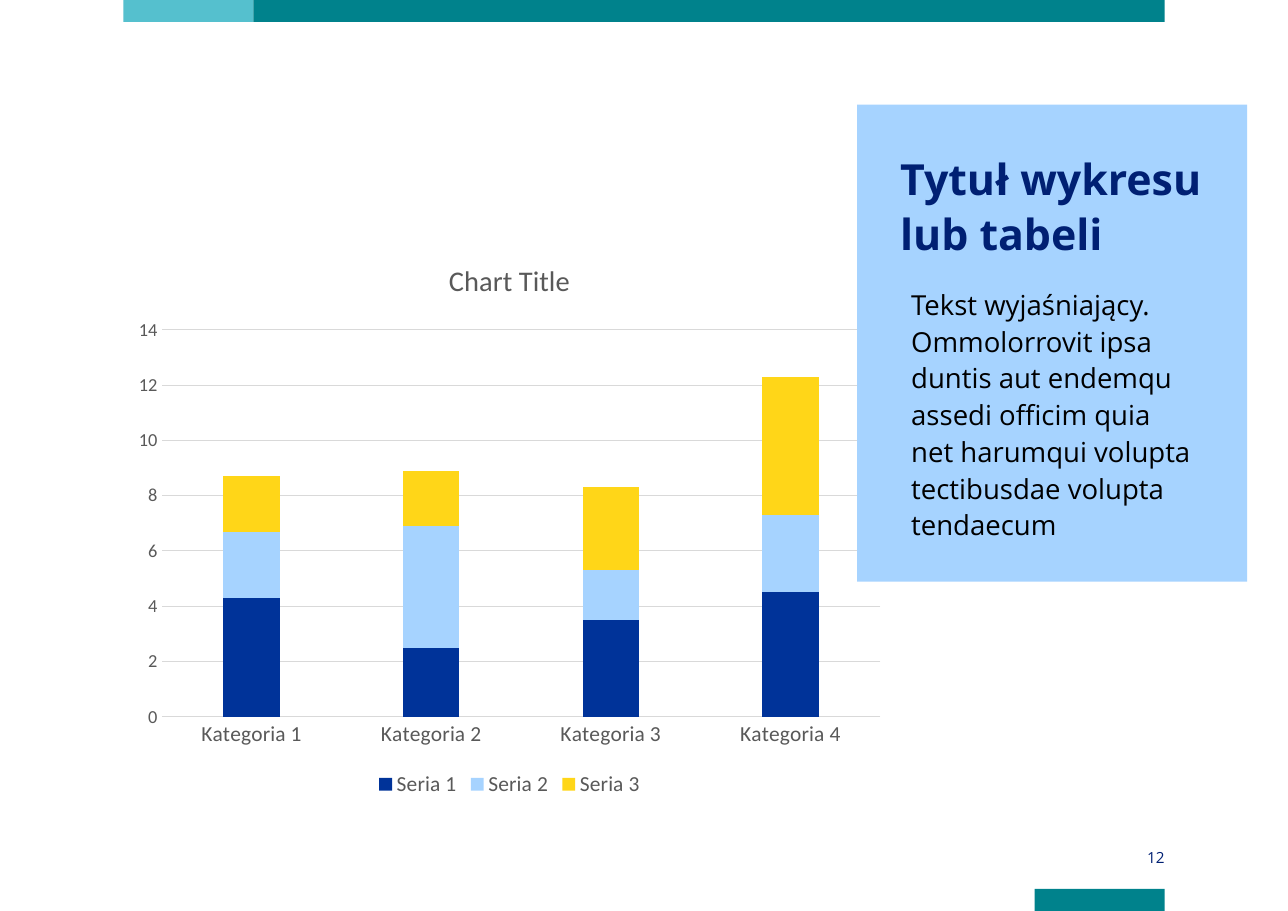
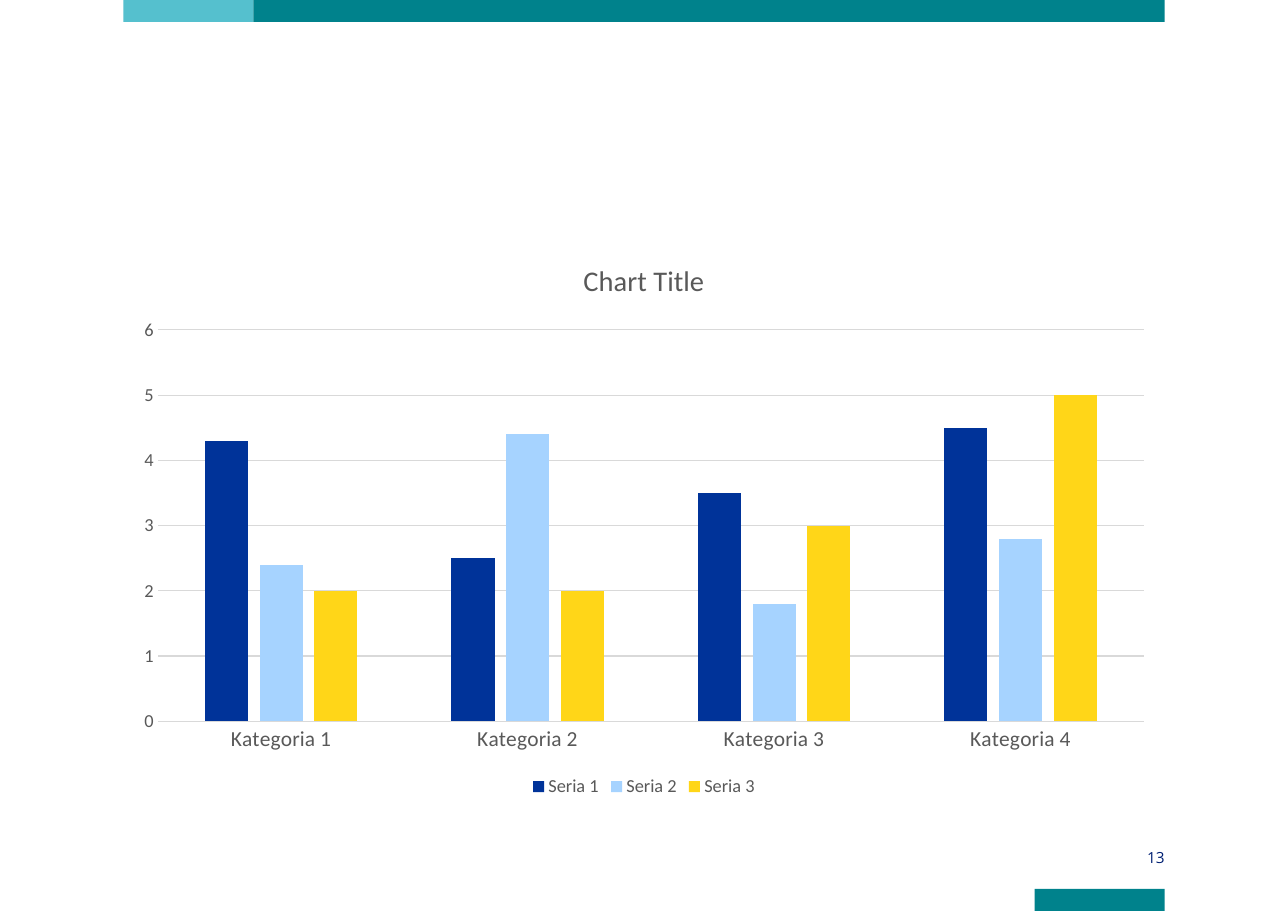
"""Build two chart slides with shared bands, page numbers and chart style."""
from dataclasses import dataclass

from lxml import etree
from pptx import Presentation
from pptx import util as u
from pptx.chart import data as cd
from pptx.dml.color import RGBColor
from pptx.enum import chart as ce, shapes, text
from pptx.oxml import ns

SCALE = 9144
WIDTH, HEIGHT = 1169, 827
LEFT, RIGHT = 112, 1057
BAND, TAB = 20, 118
TEAL, AQUA, NAVY = "00828C", "55C0CE", "002073"
SKY, GREY, RULE, BLACK = "A6D3FF", "595959", "D9D9D9", "000000"
FONT, PLOT_FONT = "Open Sans", "Calibri"
CATS = [f"Kategoria {n}" for n in range(1, 5)]


@dataclass(frozen=True)
class Box:
    """A rectangle in px."""
    left: int
    top: int
    width: int
    height: int

    def emu(self) -> list[int]:
        """Return the four lengths in EMU."""
        return [n * SCALE for n in (self.left, self.top, self.width, self.height)]


@dataclass(frozen=True)
class Band:
    """A coloured bar of the master."""
    box: Box
    fill: str


@dataclass(frozen=True)
class Series:
    """A named and coloured row of chart values."""
    name: str
    color: str
    vals: tuple[float, ...]


@dataclass(frozen=True)
class Plot:
    """What differs between the charts."""
    kind: ce.XL_CHART_TYPE
    width: int
    overlap: int
    legend: int


BANDS = [
    Band(Box(LEFT, 0, TAB, BAND), AQUA),
    Band(Box(LEFT + TAB, 0, RIGHT - LEFT - TAB, BAND), TEAL),
    Band(Box(RIGHT - TAB, HEIGHT - BAND, TAB, BAND), TEAL),
]
SERIES = [
    Series("Seria 1", "003399", (4.3, 2.5, 3.5, 4.5)),
    Series("Seria 2", SKY, (2.4, 4.4, 1.8, 2.8)),
    Series("Seria 3", "FFD618", (2, 2, 3, 5)),
]
STACKED = Plot(ce.XL_CHART_TYPE.COLUMN_STACKED, 701, 100, 14)
GROUPED = Plot(ce.XL_CHART_TYPE.COLUMN_CLUSTERED, RIGHT - LEFT, -27, 12)


def rgb(code: str) -> RGBColor:
    """Turn a hex string into a colour."""
    return RGBColor.from_string(code)


def style(font, size: float, color: str, name: str = FONT, bold: bool = False) -> None:
    """Set the look of a font."""
    font.size, font.name, font.bold = u.Pt(size), name, bold
    font.color.rgb = rgb(color)


def rect(slide, box: Box, fill: str):
    """Draw a plain filled rectangle."""
    shape = slide.shapes.add_shape(shapes.MSO_SHAPE.RECTANGLE, *box.emu())
    shape.shadow.inherit = False
    shape.fill.solid()
    shape.fill.fore_color.rgb = rgb(fill)
    shape.line.fill.background()
    return shape


def dress(master, slide) -> None:
    """Draw the bands and move them to the master."""
    for num, band in enumerate(BANDS, 101):
        item = rect(slide, band.box, band.fill).element
        item.xpath(".//p:cNvPr")[0].set("id", str(num))
        master.shapes.element.append(item)


def page(slide, num: int) -> None:
    """Write the page number."""
    box = slide.shapes.add_textbox(*Box(RIGHT - TAB, 768, TAB, 20).emu())
    frame = box.text_frame
    frame.word_wrap = True
    frame.vertical_anchor = text.MSO_ANCHOR.MIDDLE
    frame.margin_left = frame.margin_right = 0
    frame.margin_top = frame.margin_bottom = 8 * SCALE
    para = frame.paragraphs[0]
    para.alignment = text.PP_ALIGN.RIGHT
    run = para.add_run()
    run.text = str(num)
    style(run.font, 10, NAVY)


def plot(slide, spec_: Plot) -> None:
    """Add a column chart in the shared style."""
    data = cd.CategoryChartData()
    data.categories = CATS
    for row in SERIES:
        data.add_series(row.name, row.vals)
    box = Box(LEFT, 216, spec_.width, 512)
    chart = slide.shapes.add_chart(spec_.kind, *box.emu(), data).chart
    style(chart.font, 10, BLACK, PLOT_FONT)
    chart.has_title = True
    run = chart.chart_title.text_frame.paragraphs[0].add_run()
    run.text = "Chart Title"
    style(run.font, 18.6, GREY, PLOT_FONT)
    chart.has_legend = True
    chart.legend.position = ce.XL_LEGEND_POSITION.BOTTOM
    chart.legend.include_in_layout = False
    style(chart.legend.font, spec_.legend, GREY, PLOT_FONT)
    cats, vals = chart.category_axis, chart.value_axis
    for axis, size in ((cats, 14), (vals, 12)):
        axis.major_tick_mark = axis.minor_tick_mark = ce.XL_TICK_MARK.NONE
        style(axis.tick_labels.font, size, GREY, PLOT_FONT)
    vals.has_major_gridlines = True
    for line in (cats.format.line, vals.major_gridlines.format.line):
        line.color.rgb = rgb(RULE)
        line.width = u.Pt(0.75)
    vals.format.line.fill.background()
    bars = chart.plots[0]
    bars.vary_by_categories = False
    bars.gap_width, bars.overlap = 219, spec_.overlap
    for row, item in zip(SERIES, bars.series):
        item.format.fill.solid()
        item.format.fill.fore_color.rgb = rgb(row.color)


def write(slide, holder, box: Box, words: str, size: int, lead: int,
          color: str, bold: bool = False) -> None:
    """Place a placeholder on top and fill it with one paragraph."""
    slide.shapes.element.append(holder.element)
    holder.left, holder.top, holder.width, holder.height = box.emu()
    frame = holder.text_frame
    frame.word_wrap = True
    frame.auto_size = text.MSO_AUTO_SIZE.NONE
    frame.vertical_anchor = text.MSO_ANCHOR.TOP
    para = frame.paragraphs[0]
    props = para._p.get_or_add_pPr()
    props.set("marL", "0")
    props.set("indent", "0")
    etree.SubElement(props, ns.qn("a:buNone"))
    para.alignment = text.PP_ALIGN.LEFT
    para.line_spacing = u.Pt(lead)
    para.space_before = u.Pt(0)
    run = para.add_run()
    run.text = words
    style(run.font, size, color, FONT, bold)


def panel(slide) -> None:
    """Draw the blue panel with its heading and text."""
    rect(slide, Box(778, 95, 354, 433), SKY)
    title, body = slide.shapes.title, slide.placeholders[1]
    write(slide, title, Box(817, 135, 276, 118),
          "Tytuł wykresu lub tabeli", 28, 36, NAVY, True)
    frame = title.text_frame
    frame.margin_left = frame.margin_right = 0
    frame.margin_top = frame.margin_bottom = 0
    write(slide, body, Box(817, 253, 276, 276),
          "Tekst wyjaśniający. Ommolorrovit ipsa duntis aut endemqu assedi "
          "officim quia net harumqui volupta tectibusdae volupta tendaecum",
          18, 24, BLACK)


def main() -> None:
    """Build and save the deck."""
    deck = Presentation()
    deck.slide_width, deck.slide_height = WIDTH * SCALE, HEIGHT * SCALE
    first = deck.slides.add_slide(deck.slide_layouts[1])
    dress(deck.slide_master, first)
    plot(first, STACKED)
    panel(first)
    page(first, 12)
    second = deck.slides.add_slide(deck.slide_layouts[6])
    plot(second, GROUPED)
    page(second, 13)
    deck.save("out.pptx")


if __name__ == "__main__":
    main()
